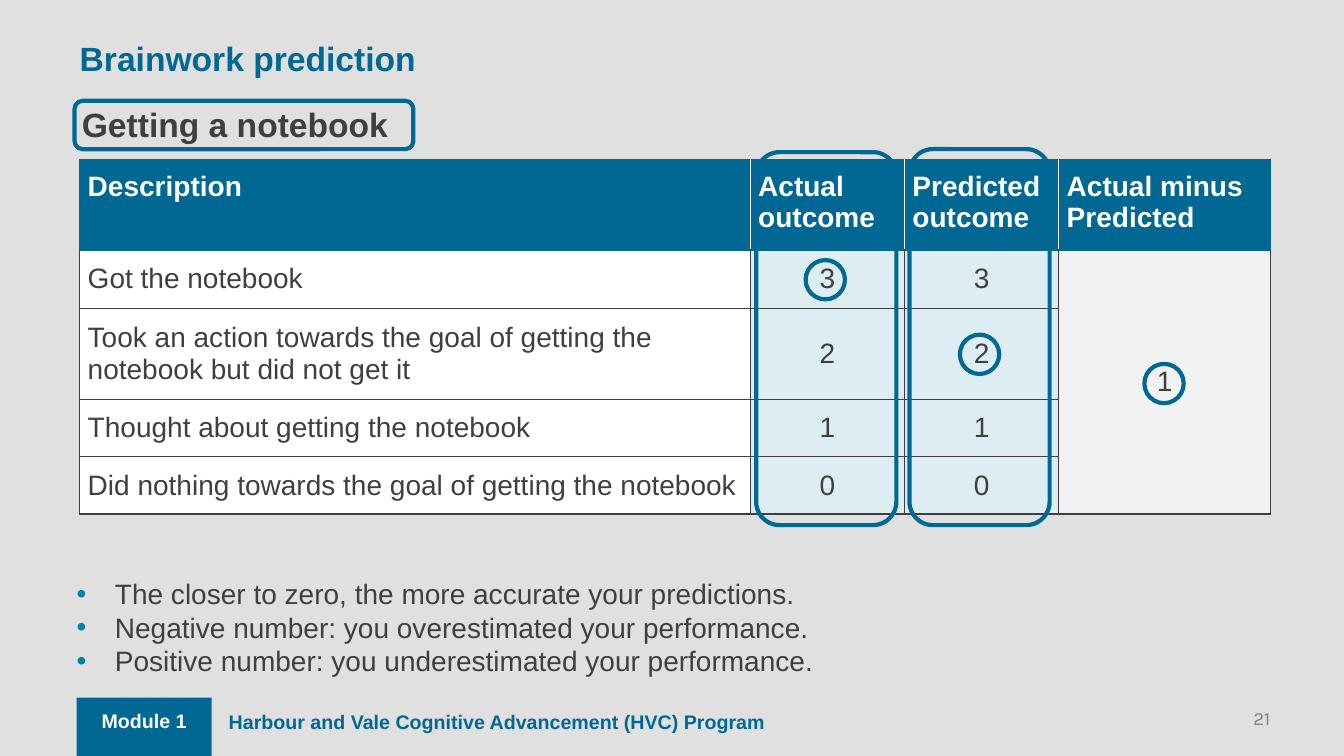
from lxml import etree
from pptx import Presentation
from pptx.dml.color import RGBColor
from pptx.enum.shapes import MSO_SHAPE
from pptx.enum.text import MSO_ANCHOR, MSO_AUTO_SIZE, PP_ALIGN
from pptx.oxml.ns import qn
from pptx.util import Inches, Pt

LEFT, CENTER, RIGHT = PP_ALIGN.LEFT, PP_ALIGN.CENTER, PP_ALIGN.RIGHT
TOP, MIDDLE = MSO_ANCHOR.TOP, MSO_ANCHOR.MIDDLE
RECT, ROUNDED, OVAL = MSO_SHAPE.RECTANGLE, MSO_SHAPE.ROUNDED_RECTANGLE, MSO_SHAPE.OVAL
NO_AUTOFIT = MSO_AUTO_SIZE.NONE

BLUE, INK, WHITE = "006892", "3F3F3F", "FFFFFF"
PALE_BLUE, PALE_GREY, BACKGROUND = "DEEDF3", "F2F2F2", "E0E0E0"
BULLET, NUMBER_GREY = "0082AA", "808080"

COLUMN_WIDTHS = [6.65, 1.53, 1.53, 2.1]
ROW_HEIGHTS = [0.9, 0.58, 0.9, 0.57, 0.57]
HEADINGS = ["Description", "Actual outcome", "Predicted outcome", "Actual minus Predicted"]
OUTCOMES = [
    ("Got the notebook", "3"),
    ("Took an action towards the goal of getting the notebook but did not get it", "2"),
    ("Thought about getting the notebook", "1"),
    ("Did nothing towards the goal of getting the notebook", "0"),
]
DIFFERENCE = "1"
INTERPRETATIONS = [
    "The closer to zero, the more accurate your predictions.",
    "Negative number: you overestimated your performance.",
    "Positive number: you underestimated your performance.",
]


def rgb(value):
    return RGBColor.from_string(value)


def write(paragraph, text, size, color, bold=False, align=LEFT, font="Arial"):
    paragraph.alignment = align
    run = paragraph.add_run()
    run.text = text
    run.font.name = font
    run.font.size = Pt(size)
    run.font.bold = bold
    run.font.color.rgb = rgb(color)


def set_frame(frame, anchor=TOP, inset_x=0.0, inset_y=0.0):
    frame.word_wrap = True
    frame.auto_size = NO_AUTOFIT
    frame.vertical_anchor = anchor
    frame.margin_left = frame.margin_right = Inches(inset_x)
    frame.margin_top = frame.margin_bottom = Inches(inset_y)


def place(shape, left, top, width, height):
    shape.left, shape.top = Inches(left), Inches(top)
    shape.width, shape.height = Inches(width), Inches(height)


def add_label(slide, box, text, size, color, inset_x=0.1, inset_y=0.05, **style):
    frame = slide.shapes.add_textbox(*map(Inches, box)).text_frame
    set_frame(frame, TOP, inset_x, inset_y)
    write(frame.paragraphs[0], text, size, color, **style)


def add_block(slide, box, color):
    block = slide.shapes.add_shape(RECT, *map(Inches, box))
    block.shadow.inherit = False
    block.fill.solid()
    block.fill.fore_color.rgb = rgb(color)
    block.line.fill.background()


def add_outline(slide, kind, box):
    outline = slide.shapes.add_shape(kind, *map(Inches, box))
    outline.shadow.inherit = False
    outline.fill.background()
    outline.line.color.rgb = rgb(BLUE)
    outline.line.width = Pt(3)


def set_borders(cell, colors):
    properties = cell._tc.get_or_add_tcPr()
    for side, color in zip("LRTB", colors):
        line = etree.SubElement(properties, qn(f"a:ln{side}"), w=str(Pt(1)))
        fill = etree.SubElement(line, qn("a:solidFill"))
        etree.SubElement(fill, qn("a:srgbClr"), val=color)


def format_cell(cell, fill, borders, anchor=MIDDLE):
    set_borders(cell, borders)
    cell.fill.solid()
    cell.fill.fore_color.rgb = rgb(fill)
    cell.vertical_anchor = anchor
    cell.margin_left = cell.margin_right = Inches(0.08)
    cell.margin_top = cell.margin_bottom = Inches(0.12)


def add_outcome_table(slide):
    rows, columns = len(ROW_HEIGHTS), len(COLUMN_WIDTHS)
    table = slide.shapes.add_table(
        rows, columns, Inches(0.79), Inches(1.58),
        Inches(sum(COLUMN_WIDTHS)), Inches(sum(ROW_HEIGHTS)),
    ).table
    table.first_row = table.horz_banding = False
    for column, width in zip(table.columns, COLUMN_WIDTHS):
        column.width = Inches(width)
    for row, height in zip(table.rows, ROW_HEIGHTS):
        row.height = Inches(height)

    last = columns - 1
    for index, heading in enumerate(HEADINGS):
        cell = table.cell(0, index)
        left = BLUE if index == 0 else WHITE
        right = BLUE if index == last else WHITE
        format_cell(cell, BLUE, (left, right, BLUE, BLUE), TOP)
        write(cell.text_frame.paragraphs[0], heading, 20, WHITE, bold=True)

    fills = [WHITE, PALE_BLUE, PALE_BLUE, PALE_GREY]
    for row, (description, score) in enumerate(OUTCOMES, start=1):
        top = BLUE if row == 1 else INK
        for index, fill in enumerate(fills):
            format_cell(table.cell(row, index), fill, (INK, INK, top, INK))
        for index, text in enumerate([description, score, score]):
            align = LEFT if index == 0 else CENTER
            write(table.cell(row, index).text_frame.paragraphs[0], text, 20, INK, align=align)

    difference = table.cell(1, last)
    difference.merge(table.cell(rows - 1, last))
    write(difference.text_frame.paragraphs[0], DIFFERENCE, 20, INK, align=CENTER)


def fill_title(title):
    place(title, 0.79, 0.34, 8.92, 0.47)
    set_frame(title.text_frame, MIDDLE)
    write(title.text_frame.paragraphs[0], "Brainwork prediction", 24, BLUE, bold=True)


def add_bullet(paragraph):
    properties = paragraph._p.get_or_add_pPr()
    properties.set("marL", str(Inches(0.38)))
    properties.set("indent", str(-Inches(0.38)))
    color = etree.SubElement(properties, qn("a:buClr"))
    etree.SubElement(color, qn("a:srgbClr"), val=BULLET)
    etree.SubElement(properties, qn("a:buFont"), typeface="Arial")
    etree.SubElement(properties, qn("a:buChar"), char="•")


def fill_interpretations(body):
    place(body, 0.76, 5.72, 11.81, 0.97)
    frame = body.text_frame
    set_frame(frame)
    for index, text in enumerate(INTERPRETATIONS):
        paragraph = frame.paragraphs[0] if index == 0 else frame.add_paragraph()
        paragraph.space_before = Pt(0)
        add_bullet(paragraph)
        write(paragraph, text, 20, INK)


def add_footer(slide):
    add_block(slide, (0.76, 6.92, 1.34, 0.58), BLUE)
    add_label(slide, (2.17, 6.99, 11.14, 0.47),
              "Harbour and Vale Cognitive Advancement (HVC) Program", 14, BLUE, bold=True)
    add_label(slide, (0.76, 6.98, 1.34, 0.34), "Module 1", 14, WHITE, bold=True, align=CENTER)
    add_label(slide, (10.6, 7.01, 2, 0.2), "21", 13.3, NUMBER_GREY, 0, 0,
              align=RIGHT, font="Karla")


def add_highlights(slide):
    add_outline(slide, ROUNDED, (0.74, 1, 3.36, 0.48))
    add_outline(slide, ROUNDED, (7.5, 1.51, 1.39, 3.7))
    add_outline(slide, ROUNDED, (9.02, 1.48, 1.39, 3.73))
    for left, top in [(7.99, 2.58), (9.52, 3.32), (11.35, 3.61)]:
        add_outline(slide, OVAL, (left, top, 0.39, 0.39))


def main():
    presentation = Presentation()
    presentation.slide_width, presentation.slide_height = Inches(13.33), Inches(7.5)
    slide = presentation.slides.add_slide(presentation.slide_layouts[1])
    slide.background.fill.solid()
    slide.background.fill.fore_color.rgb = rgb(BACKGROUND)

    add_footer(slide)
    add_outcome_table(slide)
    fill_title(slide.shapes.title)
    fill_interpretations(slide.placeholders[1])
    add_label(slide, (0.27, 0.98, 4.12, 0.5), "Getting a notebook", 24, INK,
              bold=True, align=CENTER)
    add_highlights(slide)
    presentation.save("out.pptx")


if __name__ == "__main__":
    main()
